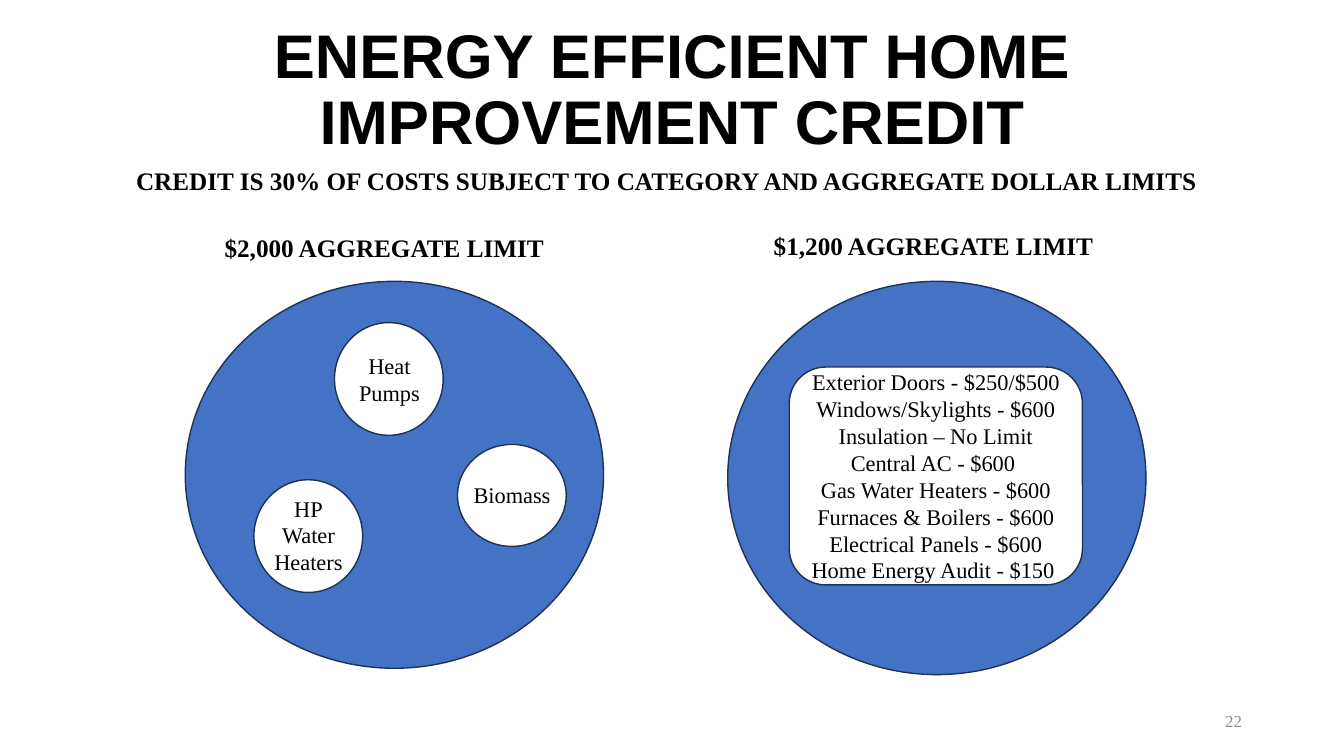
from dataclasses import dataclass

from pptx import Presentation
from pptx.dml.color import RGBColor
from pptx.enum.shapes import MSO_SHAPE as Preset
from pptx.enum.text import MSO_ANCHOR as Anchor, MSO_AUTO_SIZE as AutoSize, PP_ALIGN as Align
from pptx.shapes.autoshape import Shape
from pptx.slide import Slide
from pptx.text.text import TextFrame
from pptx.util import Cm, Pt

BLACK = RGBColor(0x00, 0x00, 0x00)
WHITE = RGBColor(0xFF, 0xFF, 0xFF)
BLUE = RGBColor(0x44, 0x72, 0xC4)
NAVY = RGBColor(0x1E, 0x32, 0x56)
GRAY = RGBColor(0x8C, 0x8C, 0x8C)
SERIF = "Times New Roman"
SANS = "Arial"


@dataclass(frozen=True)
class Box:
    """Position and size in centimetres."""
    left: float
    top: float
    width: float
    height: float

    def lengths(self) -> tuple[Cm, Cm, Cm, Cm]:
        return Cm(self.left), Cm(self.top), Cm(self.width), Cm(self.height)


@dataclass(frozen=True)
class Label:
    box: Box
    text: str
    size: int = 18
    bold: bool = True
    color: RGBColor = BLACK
    align: Align = Align.LEFT
    anchor: Anchor = Anchor.TOP
    wrap: bool = True


@dataclass(frozen=True)
class Measure:
    circle: Box
    name: Label


def measure(circle: Box, text_box: Box, text: str) -> Measure:
    return Measure(circle, Label(text_box, text, 16, False, align=Align.CENTER))


HEADINGS = [
    Label(Box(3.18, 4.04, 27.51, 1.02),
          "CREDIT IS 30% OF COSTS SUBJECT TO CATEGORY AND AGGREGATE DOLLAR LIMITS",
          wrap=False),
    Label(Box(5.41, 5.72, 9.04, 1.02), "$2,000 AGGREGATE LIMIT"),
    Label(Box(19.25, 5.69, 8.66, 1.02), "$1,200 AGGREGATE LIMIT"),
]
PAGE_NUMBER = Label(Box(23.93, 17.65, 7.62, 1.02), "22", 12, False, GRAY,
                    Align.RIGHT, Anchor.MIDDLE)
LIMIT_CIRCLES = [Box(4.67, 7.09, 10.54, 9.75), Box(18.34, 7.09, 10.54, 9.91)]
MEASURES = [
    measure(Box(8.43, 8.13, 2.74, 2.84), Box(8.76, 8.74, 2.11, 1.63), "Heat Pumps"),
    measure(Box(11.53, 11.2, 2.74, 2.57), Box(11.66, 12.01, 2.49, 0.94), "Biomass"),
    measure(Box(6.4, 12.09, 2.74, 2.84), Box(6.58, 12.34, 2.39, 2.31), "HP\nWater Heaters"),
]
CATEGORY_BOX = Box(19.89, 9.25, 7.39, 5.49)
CATEGORY_LIMITS = [
    "Exterior Doors - $250/$500",
    "Windows/Skylights - $600",
    "Insulation – No Limit",
    "Central AC - $600 ",
    "Gas Water Heaters - $600",
    "Furnaces & Boilers - $600",
    "Electrical Panels - $600",
    "Home Energy Audit - $150 ",
]


def write(frame: TextFrame, text: str, size: int, bold: bool, color: RGBColor,
          align: Align, font_name: str = SERIF) -> None:
    frame.text = text
    for paragraph in frame.paragraphs:
        paragraph.alignment = align
        for run in paragraph.runs:
            run.font.name = font_name
            run.font.size = Pt(size)
            run.font.bold = bold
            run.font.color.rgb = color


def add_label(slide: Slide, label: Label) -> None:
    frame = slide.shapes.add_textbox(*label.box.lengths()).text_frame
    frame.word_wrap = label.wrap
    frame.vertical_anchor = label.anchor
    write(frame, label.text, label.size, label.bold, label.color, label.align)


def add_outlined(slide: Slide, preset: Preset, box: Box, fill: RGBColor) -> Shape:
    shape = slide.shapes.add_shape(preset, *box.lengths())
    shape.shadow.inherit = False
    shape.fill.solid()
    shape.fill.fore_color.rgb = fill
    shape.line.color.rgb = NAVY
    shape.line.width = Pt(1)
    return shape


def add_title(slide: Slide) -> None:
    title = slide.shapes.title
    title.left, title.top, title.width, title.height = Box(2.34, 0.38, 29.21, 3.86).lengths()
    frame = title.text_frame
    frame.auto_size = AutoSize.NONE
    frame.word_wrap = True
    frame.vertical_anchor = Anchor.MIDDLE
    write(frame, "ENERGY EFFICIENT HOME IMPROVEMENT CREDIT", 44, True, BLACK,
          Align.CENTER, SANS)
    frame.paragraphs[0].line_spacing = 0.9


def main() -> None:
    deck = Presentation()
    deck.slide_width, deck.slide_height = Cm(33.87), Cm(19.05)
    slide = deck.slides.add_slide(deck.slide_layouts[5])

    # Title, subtitle and limit headings
    add_title(slide)
    for heading in HEADINGS:
        add_label(slide, heading)

    # The two aggregate limits
    for circle in LIMIT_CIRCLES:
        add_outlined(slide, Preset.FLOWCHART_CONNECTOR, circle, BLUE)

    # Measures under the $2,000 limit
    for item in MEASURES:
        add_outlined(slide, Preset.FLOWCHART_CONNECTOR, item.circle, WHITE)
        add_label(slide, item.name)

    # Category limits under the $1,200 limit
    categories = add_outlined(slide, Preset.ROUNDED_RECTANGLE, CATEGORY_BOX, WHITE).text_frame
    categories.word_wrap = True
    categories.vertical_anchor = Anchor.MIDDLE
    write(categories, "\n".join(CATEGORY_LIMITS), 16, False, BLACK, Align.CENTER)

    # Page number
    add_label(slide, PAGE_NUMBER)

    deck.save("out.pptx")


if __name__ == "__main__":
    main()
